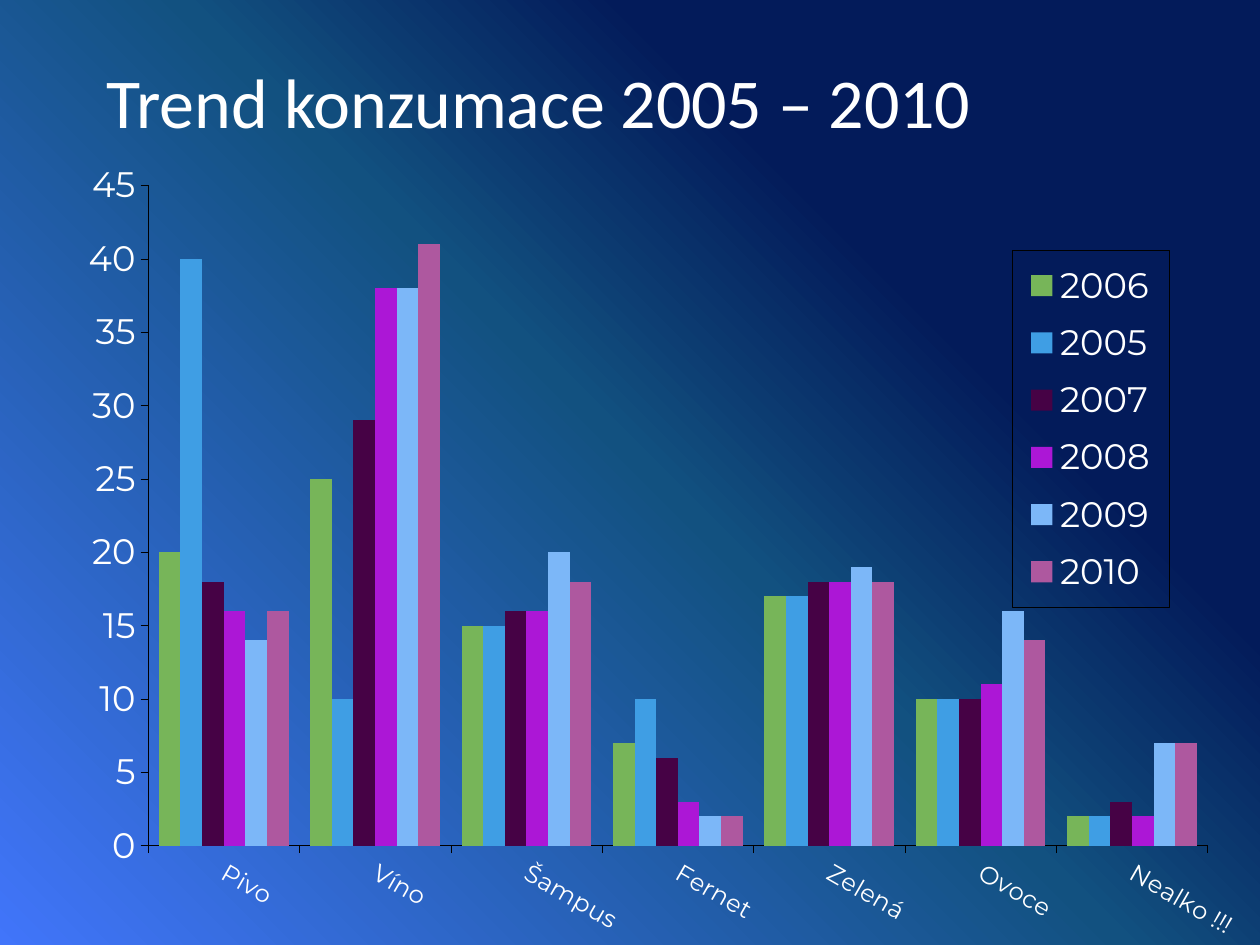
from copy import deepcopy

from lxml import etree
from pptx import Presentation
from pptx.chart.data import CategoryChartData
from pptx.dml.color import RGBColor
from pptx.enum.chart import XL_CHART_TYPE as ChartType
from pptx.enum.chart import XL_LEGEND_POSITION as LegendPos
from pptx.enum.chart import XL_TICK_MARK as TickMark
from pptx.enum.text import MSO_ANCHOR as Anchor
from pptx.oxml import parse_xml
from pptx.oxml.ns import nsdecls, qn
from pptx.util import Inches, Pt

WHITE = "FFFFFF"
BLACK = "000000"
AXIS_WIDTH = 0.29
BACKGROUND = [(0.29, "031B5A"), (0.49, "125180"), (1, "4175FA")]
DRINKS = ["Pivo", "Víno", "Šampus", "Fernet", "Zelená", "Ovoce", "Nealko !!!"]
YEARS = [
    ("2006", "77B559", [20, 25, 15, 7, 17, 10, 2]),
    ("2005", "3F9EE4", [40, 10, 15, 10, 17, 10, 2]),
    ("2007", "460245", [18, 29, 16, 6, 18, 10, 3]),
    ("2008", "AC17D6", [16, 38, 16, 3, 18, 11, 2]),
    ("2009", "7CB7F8", [14, 38, 20, 2, 19, 16, 7]),
    ("2010", "AE589F", [16, 41, 18, 2, 18, 14, 7]),
]


def rgb(value):
    return RGBColor.from_string(value)


def set_font(font, name, size, color):
    font.name = name
    font.size = Pt(size)
    font.color.rgb = rgb(color)


def set_background(slide, stops):
    fill = slide.background.fill
    fill.gradient()
    fill.gradient_angle = 225
    gs_list = slide.element.find(".//" + qn("a:gsLst"))
    gs_list.append(deepcopy(gs_list[-1]))
    for stop, (position, color) in zip(fill.gradient_stops, stops):
        stop.position = position
        stop.color.rgb = rgb(color)


def make_layout(x, y, w, h, inner=False):
    layout = parse_xml(f"<c:layout {nsdecls('c')}><c:manualLayout/></c:layout>")
    values = [("layoutTarget", "inner")] if inner else []
    values += [("xMode", "edge"), ("yMode", "edge")]
    values += [("x", x), ("y", y), ("w", w), ("h", h)]
    for tag, value in values:
        etree.SubElement(layout[0], qn(f"c:{tag}")).set("val", str(value))
    return layout


def replace_layout(parent, index, layout):
    for old in parent.findall(qn("c:layout")):
        parent.remove(old)
    parent.insert(index, layout)


def style_axis(axis):
    axis.has_major_gridlines = False
    axis.major_tick_mark = TickMark.OUTSIDE
    axis.minor_tick_mark = TickMark.NONE
    axis.format.line.color.rgb = rgb(BLACK)
    axis.format.line.width = Pt(AXIS_WIDTH)


def rotate_labels(chart, degrees):
    body = chart.element.find(f".//{qn('c:catAx')}/{qn('c:txPr')}/{qn('a:bodyPr')}")
    body.set("rot", str(degrees * 60000))
    body.set("vert", "horz")


def add_legend(chart):
    chart.has_legend = True
    chart.legend.position = LegendPos.RIGHT
    chart.legend.include_in_layout = False
    set_font(chart.legend.font, "Montserrat", 20.2, WHITE)
    legend = chart.element.find(".//" + qn("c:legend"))
    replace_layout(legend, 1, make_layout(0.8, 0.21, 0.13, 0.36))
    border = parse_xml(
        f'<c:spPr {nsdecls("c", "a")}><a:noFill/><a:ln w="{Pt(AXIS_WIDTH)}">'
        f'<a:solidFill><a:srgbClr val="{BLACK}"/></a:solidFill></a:ln></c:spPr>'
    )
    legend.find(qn("c:txPr")).addprevious(border)


def add_column_chart(slide, x, y, w, h):
    data = CategoryChartData()
    data.categories = DRINKS
    for year, _, values in YEARS:
        data.add_series(year, values)
    frame = slide.shapes.add_chart(
        ChartType.COLUMN_CLUSTERED, Inches(x), Inches(y), Inches(w), Inches(h), data
    )
    chart = frame.chart
    chart.has_title = False
    set_font(chart.font, "Montserrat", 20.2, WHITE)
    plot = chart.plots[0]
    plot.gap_width = 100
    plot.overlap = 0
    plot.vary_by_categories = False
    for series, (_, color, _) in zip(plot.series, YEARS):
        series.format.fill.solid()
        series.format.fill.fore_color.rgb = rgb(color)
    for axis in (chart.category_axis, chart.value_axis):
        style_axis(axis)
    chart.value_axis.minimum_scale = 0
    chart.value_axis.maximum_scale = 45
    chart.value_axis.major_unit = 5
    set_font(chart.category_axis.tick_labels.font, "Montserrat", 14, WHITE)
    rotate_labels(chart, 30)
    plot_area = chart.element.find(".//" + qn("c:plotArea"))
    replace_layout(plot_area, 0, make_layout(0.085, 0.145, 0.877, 0.665, inner=True))
    add_legend(chart)


def add_title(slide, text, x, y, w, h):
    box = slide.shapes.add_textbox(Inches(x), Inches(y), Inches(w), Inches(h))
    tf = box.text_frame
    tf.word_wrap = True
    tf.vertical_anchor = Anchor.MIDDLE
    p = tf.paragraphs[0]
    p.text = text
    set_font(p.font, "Calibri", 40, WHITE)


def main():
    prs = Presentation()
    prs.slide_width = Inches(10)
    prs.slide_height = Inches(7.5)
    slide = prs.slides.add_slide(prs.slide_layouts[6])
    set_background(slide, BACKGROUND)
    add_column_chart(slide, 0.36, 0.33, 9.59, 7.88)
    add_title(slide, "Trend konzumace 2005 – 2010", 0.75, 0.33, 8.5, 0.94)
    prs.save("out.pptx")


if __name__ == "__main__":
    main()
